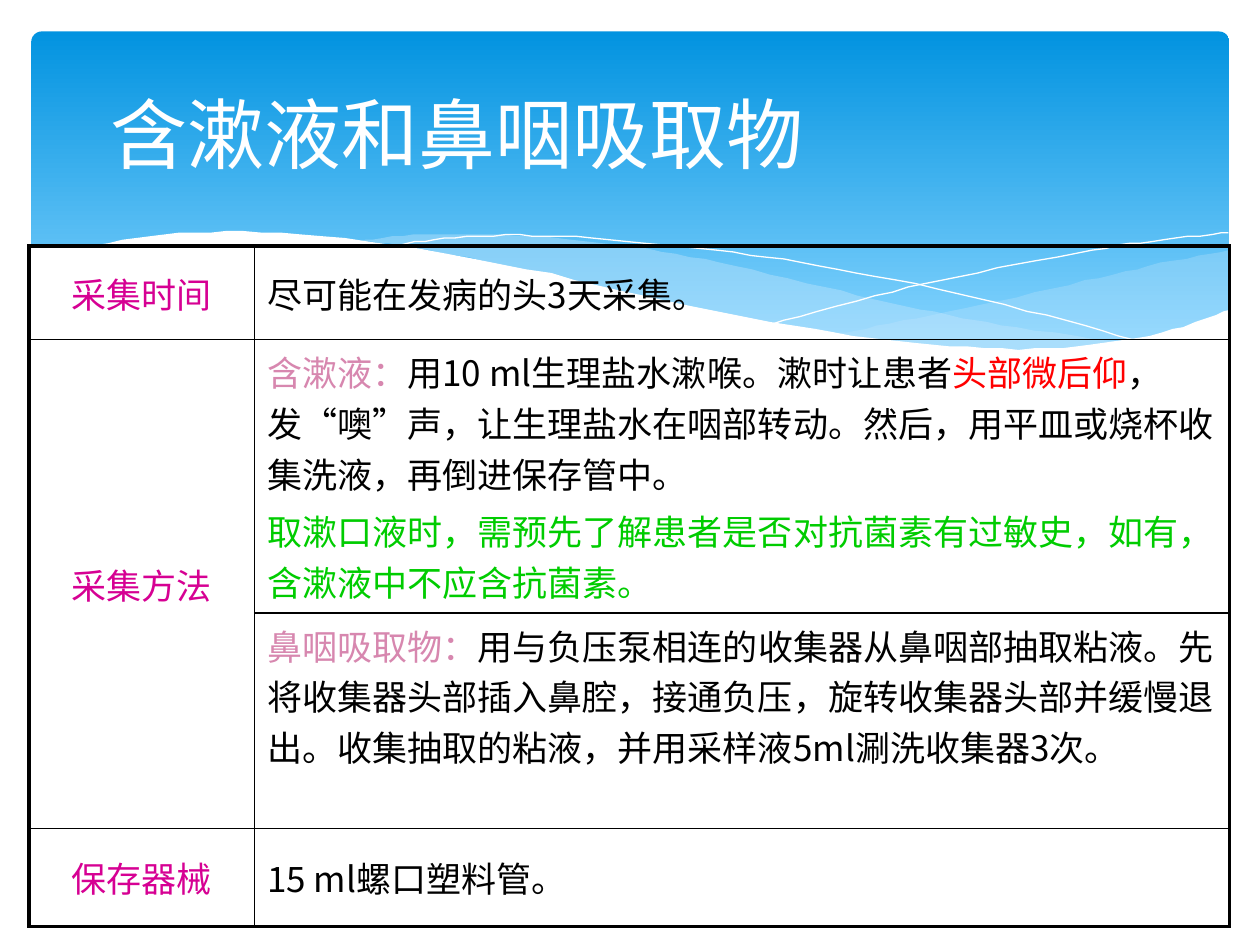
from lxml.etree import SubElement
from pptx import Presentation
from pptx.dml.color import RGBColor
from pptx.enum.shapes import MSO_SHAPE
from pptx.enum.text import MSO_ANCHOR, PP_ALIGN
from pptx.oxml.ns import qn
from pptx.util import Pt

TITLE = "含漱液和鼻咽吸取物"
CJK = "Noto Sans CJK SC"
BLACK, WHITE, PINK, ROSE = "000000", "FFFFFF", "D60093", "D787AF"
RED, GREEN, PALE = "FF0000", "00CC00", "C6E7FC"

# Each row: heading, then paragraphs of (text, colour) runs
ROWS = [
    ("采集时间", [[("尽可能在发病的头3天采集。", BLACK)]]),
    ("采集方法", [
        [("含漱液：", ROSE),
         ("用10 ml生理盐水漱喉。漱时让患者", BLACK),
         ("头部微后仰", RED),
         ("，发“噢”声，让生理盐水在咽部转动。然后，用平皿或烧杯收集洗液，再倒进保存管中。", BLACK)],
        [("取漱口液时，需预先了解患者是否对抗菌素有过敏史，如有，含漱液中不应含抗菌素。", GREEN)],
    ]),
    ("", [
        [("鼻咽吸取物：", ROSE),
         ("用与负压泵相连的收集器从鼻咽部抽取粘液。先将收集器头部插入鼻腔，接通负压，"
          "旋转收集器头部并缓慢退出。收集抽取的粘液，并用采样液5ml涮洗收集器3次。", BLACK)],
    ]),
    ("保存器械", [[("15 ml螺口塑料管。", BLACK)]]),
]
COLS = [129, 557]
HEIGHTS = [53.5, 156, 123, 56]

# Each wave: curves joined at corners, fill colour (None for a line), opacity
WAVES = [
    ([[(702.5, 143), (663, 150.5), (620, 160.5), (561, 174), (508, 185), (476, 191)],
      [(476, 191), (517, 196), (554, 199.5), (586, 200), (628, 197.5), (663, 191),
       (702.5, 178)]], PALE, 29),
    ([[(206, 137.5), (236, 134.5), (274, 134), (318, 136), (370, 142.5), (420, 152),
       (481, 166.5), (534, 178.5), (581, 187), (643, 196.5)],
      [(643, 196.5), (617, 199.5), (581, 200), (539, 198.5), (479, 191.5),
       (408, 178.5), (323, 160), (276, 149), (233, 141), (206, 137.5)]], PALE, 40),
    ([[(222.5, 140.5), (248, 137), (289, 134.5), (338, 136), (400, 142), (458, 150),
       (523, 162.5), (598, 180.5), (653, 196)]], None, 100),
    ([[(441.5, 185), (500, 169), (559, 155.5), (623.5, 143), (665, 137),
       (702, 133)]], None, 100),
    ([[(17, 153), (42, 143), (86, 135), (139, 132.5), (210, 137.5), (301, 153.5),
       (381, 172), (466, 188.5), (523, 196), (582, 199.5), (630, 196.5),
       (670, 188.5), (703, 177)], [(703, 237), (17, 237)]], WHITE, 100),
]


def rgb(code):
    return RGBColor.from_string(code)


def smooth(knots, steps=6):
    """Sample a Catmull-Rom curve through the knots."""
    ends = [knots[0], *knots, knots[-1]]
    dots = [knots[0]]
    for a, b, c, d in zip(ends, ends[1:], ends[2:], ends[3:]):
        for k in range(1, steps + 1):
            t = k / steps
            dots.append(tuple(
                (2 * q + (r - p) * t + (2 * p - 5 * q + 4 * r - s) * t ** 2
                 + (3 * q - p - 3 * r + s) * t ** 3) / 2
                for p, q, r, s in zip(a, b, c, d)))
    return dots


def add_wave(shapes, curves, color, alpha):
    dots = [dot for curve in curves for dot in smooth(curve)]
    pen = shapes.build_freeform(*dots[0], scale=Pt(1))
    pen.add_line_segments(dots[1:], close=color is not None)
    wave = pen.convert_to_shape()
    wave.shadow.inherit = False
    if color is None:
        wave.fill.background()
        wave.line.color.rgb = rgb(WHITE)
        wave.line.width = Pt(0)
        return
    wave.line.fill.background()
    wave.fill.solid()
    wave.fill.fore_color.rgb = rgb(color)
    if alpha < 100:
        tint = wave._element.spPr.find(".//" + qn("a:srgbClr"))
        SubElement(tint, qn("a:alpha"), val=str(alpha * 1000))


def style(run, size, color, latin):
    run.font.size = Pt(size)
    run.font.color.rgb = rgb(color)
    run.font.name = latin
    SubElement(run._r.get_or_add_rPr(), qn("a:ea"), typeface=CJK)


def add_edges(cell, row, col):
    """Draw thick lines round the table and thin ones inside it."""
    outer = {"L": col == 0, "R": col == len(COLS) - 1,
             "T": row == 0, "B": row == len(ROWS) - 1}
    props = cell._tc.get_or_add_tcPr()
    for k, (side, thick) in enumerate(outer.items()):
        edge = props.makeelement(qn("a:ln" + side), {"w": str(Pt(2.25 if thick else 1))})
        fill = SubElement(edge, qn("a:solidFill"))
        SubElement(fill, qn("a:srgbClr"), val=BLACK)
        props.insert(k, edge)


def fill_cell(cell, paras, align):
    frame = cell.text_frame
    for k, runs in enumerate(paras):
        para = frame.add_paragraph() if k else frame.paragraphs[0]
        para.alignment = align
        para.space_before = Pt(4)
        for text, color in runs:
            run = para.add_run()
            run.text = text
            style(run, 20, color, CJK)


def add_grid(shapes):
    grid = shapes.add_table(len(ROWS), len(COLS), Pt(16.5), Pt(140.5),
                            Pt(sum(COLS)), Pt(sum(HEIGHTS))).table
    grid.first_row = grid.horz_banding = False
    for col, width in zip(grid.columns, COLS):
        col.width = Pt(width)
    for i, (head, body) in enumerate(ROWS):
        grid.rows[i].height = Pt(HEIGHTS[i])
        left, right = grid.cell(i, 0), grid.cell(i, 1)
        left.fill.solid()
        left.fill.fore_color.rgb = rgb(WHITE)
        right.fill.background()
        for j, cell in enumerate((left, right)):
            cell.vertical_anchor = MSO_ANCHOR.MIDDLE
            add_edges(cell, i, j)
        if head:
            fill_cell(left, [[(head, PINK)]], PP_ALIGN.CENTER)
        fill_cell(right, body, PP_ALIGN.LEFT)
    grid.cell(1, 0).merge(grid.cell(2, 0))
    grid.cell(2, 1).vertical_anchor = MSO_ANCHOR.TOP


def add_banner(shapes):
    banner = shapes.add_shape(MSO_SHAPE.ROUNDED_RECTANGLE,
                              Pt(18), Pt(18), Pt(684.5), Pt(194.5))
    banner.adjustments[0] = 0.03
    banner.shadow.inherit = False
    banner.line.fill.background()
    banner.fill.gradient()
    banner.fill.gradient_angle = 270
    stops = [(0, "0293E0"), (0.9, "83D3FE")]
    for stop, (place, color) in zip(banner.fill.gradient_stops, stops):
        stop.position = place
        stop.color.rgb = rgb(color)


def set_title(shapes):
    title = shapes.title
    title.left, title.top, title.width, title.height = map(Pt, (36, 26.5, 648, 99))
    frame = title.text_frame
    frame.text = TITLE
    frame.margin_left = Pt(27)
    frame.vertical_anchor = MSO_ANCHOR.MIDDLE
    para = frame.paragraphs[0]
    para.alignment = PP_ALIGN.LEFT
    style(para.runs[0], 44, WHITE, "Calibri")
    shapes._spTree.append(title._element)  # bring in front of the banner


def main():
    deck = Presentation()
    deck.slide_width, deck.slide_height = Pt(720), Pt(540)
    shapes = deck.slides.add_slide(deck.slide_layouts[5]).shapes
    add_banner(shapes)
    for wave in WAVES:
        add_wave(shapes, *wave)
    set_title(shapes)
    add_grid(shapes)
    deck.save("out.pptx")


if __name__ == "__main__":
    main()
